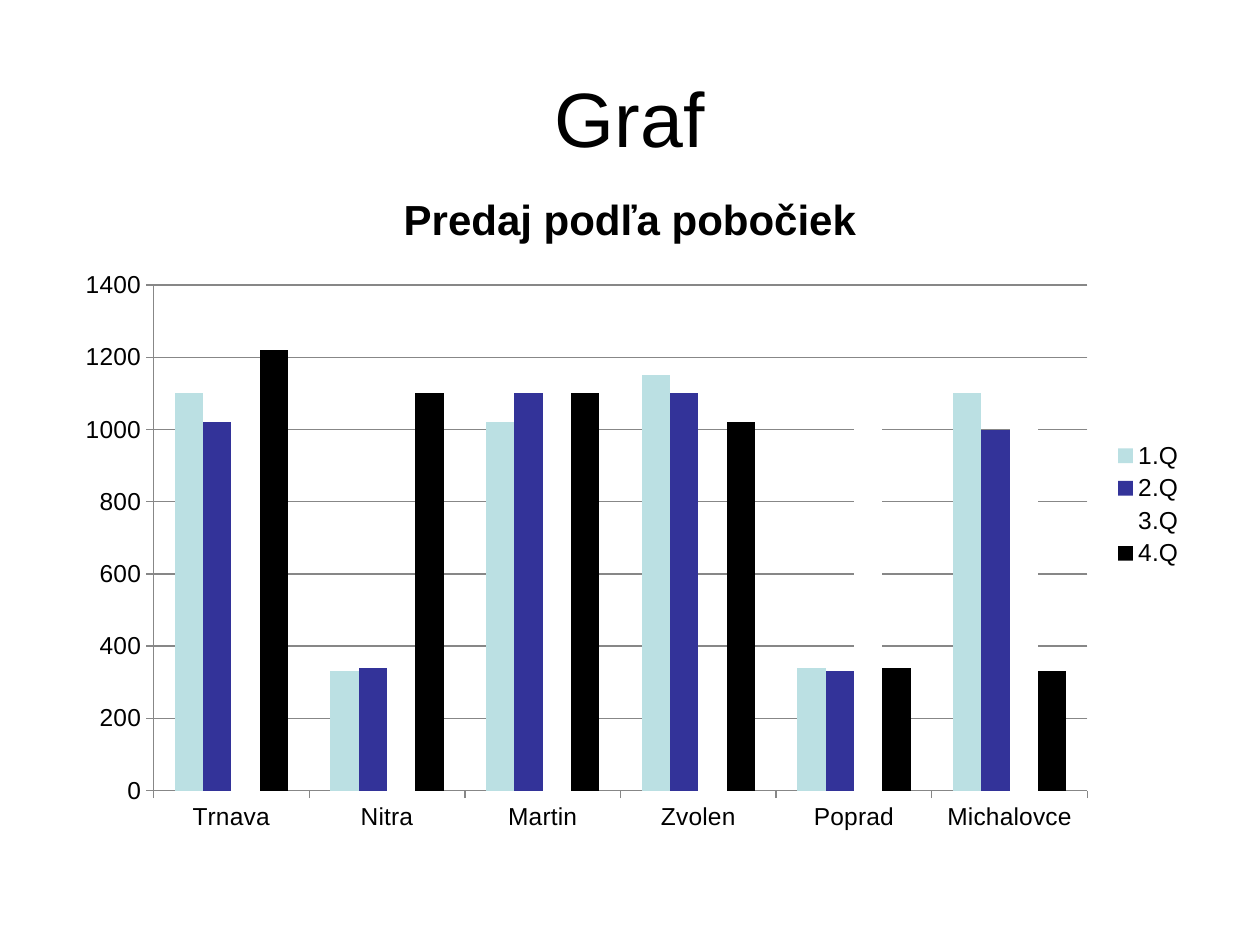
from pptx import Presentation
from pptx.chart.data import CategoryChartData as ChartData
from pptx.dml.color import RGBColor as Rgb
from pptx.enum.chart import XL_CHART_TYPE as Kind, XL_LEGEND_POSITION as Side
from pptx.enum.chart import XL_TICK_MARK as Tick
from pptx.enum.text import MSO_ANCHOR as Anchor, PP_ALIGN as Align
from pptx.util import Inches, Pt

FONT = "Arial"
COLORS = {
    "text": "000000", "axis": "878787",
    "1.Q": "BBE0E3", "2.Q": "333399", "3.Q": "FFFFFF", "4.Q": "000000",
}
TOWNS = ["Trnava", "Nitra", "Martin", "Zvolen", "Poprad", "Michalovce"]
SALES = {
    "1.Q": [1100, 330, 1020, 1150, 340, 1100],
    "2.Q": [1020, 340, 1100, 1100, 330, 1000],
    "3.Q": [1100, 330, 1080, 340, 1020, 1100],
    "4.Q": [1220, 1100, 1100, 1020, 340, 330],
}


def color(name):
    return Rgb.from_string(COLORS[name])


def set_font(font, size, bold=False):
    font.name = FONT
    font.size = Pt(size)
    font.bold = bold
    font.color.rgb = color("text")


def add_title(slide, text):
    box = slide.shapes.add_textbox(Inches(0.5), Inches(0.3), Inches(9), Inches(1.25))
    frame = box.text_frame
    frame.word_wrap = True
    frame.vertical_anchor = Anchor.MIDDLE
    frame.text = text
    para = frame.paragraphs[0]
    para.alignment = Align.CENTER
    set_font(para.runs[0].font, 44)


def style_line(line):
    line.color.rgb = color("axis")
    line.width = Pt(0.75)


def style_axis(axis):
    axis.major_tick_mark = Tick.OUTSIDE
    axis.minor_tick_mark = Tick.NONE
    style_line(axis.format.line)
    set_font(axis.tick_labels.font, 14)


def add_sales(slide, title):
    data = ChartData()
    data.categories = TOWNS
    for name, vals in SALES.items():
        data.add_series(name, vals)
    chart = slide.shapes.add_chart(
        Kind.COLUMN_CLUSTERED, Inches(0.5), Inches(1.31), Inches(9), Inches(5.39), data
    ).chart
    set_font(chart.font, 10)

    # Chart title
    chart.has_title = True
    frame = chart.chart_title.text_frame
    frame.text = title
    set_font(frame.paragraphs[0].runs[0].font, 24, bold=True)
    chart.chart_title.include_in_layout = False

    # Columns
    plot = chart.plots[0]
    plot.gap_width = 150
    plot.overlap = 0
    plot.vary_by_categories = False
    for series in plot.series:
        series.invert_if_negative = False
        series.format.fill.solid()
        series.format.fill.fore_color.rgb = color(series.name)

    # Axes
    for axis in (chart.category_axis, chart.value_axis):
        style_axis(axis)
    scale = chart.value_axis
    scale.minimum_scale, scale.maximum_scale, scale.major_unit = 0, 1400, 200
    scale.has_major_gridlines = True
    style_line(scale.major_gridlines.format.line)

    # Legend
    chart.has_legend = True
    chart.legend.position = Side.RIGHT
    chart.legend.include_in_layout = False
    set_font(chart.legend.font, 14)


def main():
    deck = Presentation()
    deck.slide_width, deck.slide_height = Inches(10), Inches(7.5)
    slide = deck.slides.add_slide(deck.slide_layouts[6])
    add_title(slide, "Graf")
    add_sales(slide, "Predaj podľa pobočiek")
    deck.save("out.pptx")


if __name__ == "__main__":
    main()
